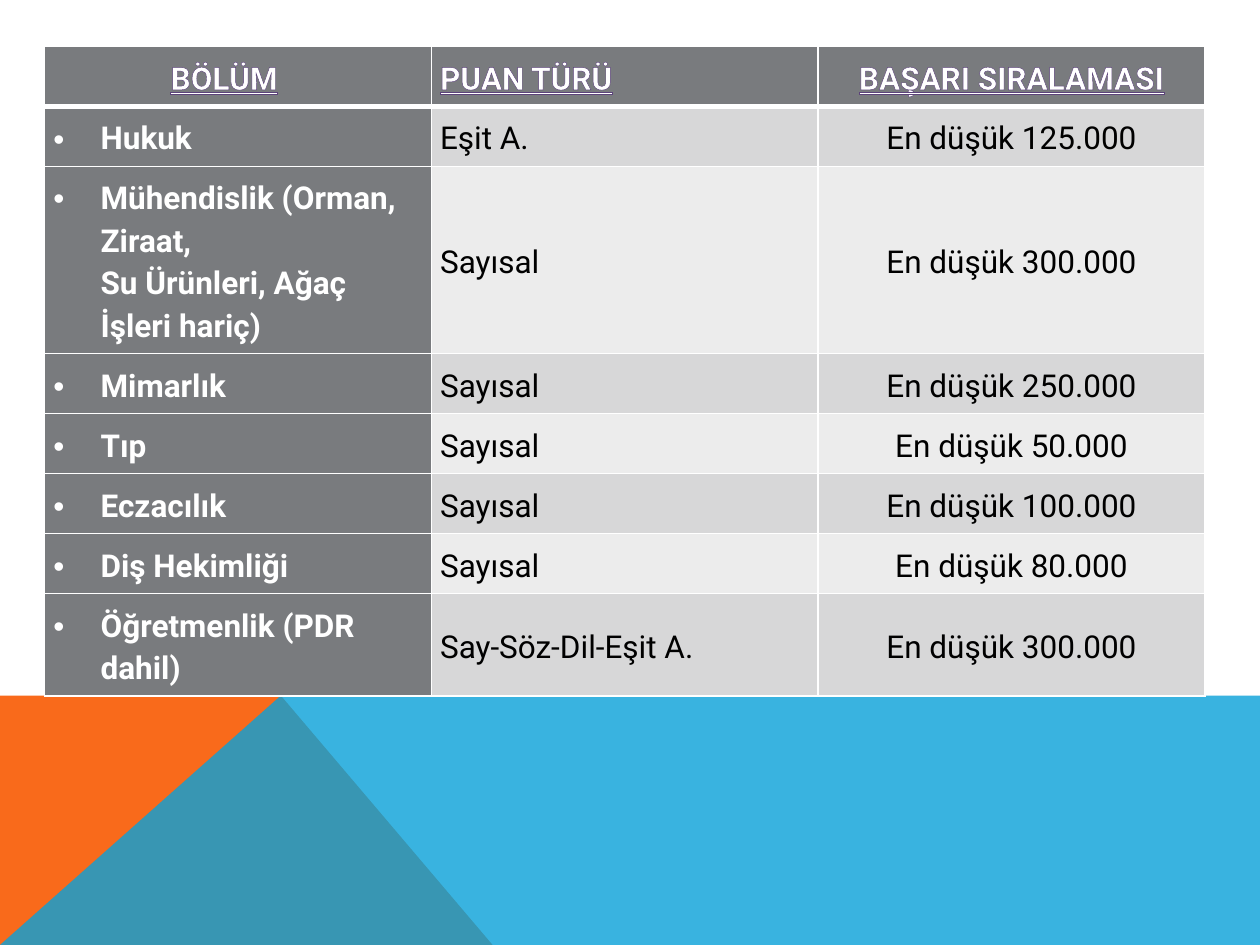
from lxml.etree import SubElement
from pptx import Presentation
from pptx.dml.color import RGBColor
from pptx.enum.text import MSO_ANCHOR as ANCHOR, PP_ALIGN as ALIGN
from pptx.oxml import parse_xml
from pptx.oxml.ns import nsdecls, qn
from pptx.util import Pt

WHITE, GRAY = "FFFFFF", "797B7E"
BANDS = ["D7D7D8", "ECECEC"]


def set_fill(fill, color):
    fill.solid()
    fill.fore_color.rgb = RGBColor.from_string(color)


def line_xml(tag, width, color):
    return parse_xml(
        f'<a:{tag} {nsdecls("a")} w="{Pt(width)}"><a:solidFill>'
        f'<a:srgbClr val="{color}"/></a:solidFill></a:{tag}>')


prs = Presentation()
prs.slide_width, prs.slide_height = Pt(720), Pt(540)
s = prs.slides.add_slide(prs.slide_layouts[6])

# Bottom decoration: orange triangle under a translucent blue band
top, peak = 397.5, 160.5
decorations = [
    ("F96A1B", 100, [(0, 540), (0, top), (peak, top), (281.5, 540)]),
    ("08A1D9", 80, [(0, 540), (peak, top), (720, top), (720, 540)]),
]
for color, opacity, points in decorations:
    builder = s.shapes.build_freeform(Pt(points[0][0]), Pt(points[0][1]))
    builder.add_line_segments([(Pt(x), Pt(y)) for x, y in points[1:]], close=True)
    sp = builder.convert_to_shape()
    sp.shadow.inherit = False
    sp.line.fill.background()
    set_fill(sp.fill, color)
    if opacity < 100:
        clr = sp._element.spPr.find(qn("a:solidFill"))[0]
        SubElement(clr, qn("a:alpha"), val=str(opacity * 1000))

# Table of departments
rows = [
    ("BÖLÜM", "PUAN TÜRÜ", "BAŞARI SIRALAMASI"),
    ("Hukuk", "Eşit A.", "En düşük 125.000"),
    ("Mühendislik (Orman, Ziraat,\vSu Ürünleri, Ağaç İşleri hariç)",
     "Sayısal", "En düşük 300.000"),
    ("Mimarlık", "Sayısal", "En düşük 250.000"),
    ("Tıp", "Sayısal", "En düşük 50.000"),
    ("Eczacılık", "Sayısal", "En düşük 100.000"),
    ("Diş Hekimliği", "Sayısal", "En düşük 80.000"),
    ("Öğretmenlik (PDR dahil)", "Say-Söz-Dil-Eşit A.", "En düşük 300.000"),
]
heights = [33.5, 33.9, 106.5, 33.9, 33.9, 33.9, 33.9, 57.5]
table = s.shapes.add_table(len(rows), 3, Pt(25.5), Pt(26.5),
                           Pt(663), Pt(sum(heights))).table
for col in table.columns:
    col.width = Pt(221)

for i, (row, height) in enumerate(zip(rows, heights)):
    table.rows[i].height = Pt(height)
    for j, text in enumerate(row):
        header, dark = i == 0, i == 0 or j == 0
        cell = table.cell(i, j)
        cell.vertical_anchor = ANCHOR.MIDDLE
        cell.margin_left = cell.margin_right = Pt(5)
        cell.margin_top = cell.margin_bottom = Pt(5)

        # Borders, thicker below the header, then the fill
        tcPr = cell._tc.get_or_add_tcPr()
        widths = {"lnL": 1, "lnR": 1, "lnT": 3 if i == 1 else 1,
                  "lnB": 3 if header else 1}
        for tag, width in widths.items():
            tcPr.append(line_xml(tag, width, WHITE))
        set_fill(cell.fill, GRAY if dark else BANDS[(i - 1) % 2])

        # Text
        p = cell.text_frame.paragraphs[0]
        p.text = text
        p.line_spacing = 1.15
        p.alignment = ALIGN.CENTER if j == 2 else ALIGN.LEFT
        for r in p.runs:
            r.font.name, r.font.size = "Roboto", Pt(18)
            r.font.bold, r.font.underline = dark, header
            set_fill(r.font.fill, WHITE if dark else "000000")
            if header:
                r.font._element.insert(0, line_xml("ln", 0.35, "5C437A"))

        # Indents and bullets of the first column
        if j == 0:
            pPr = p._p.get_or_add_pPr()
            pPr.set("marL", str(Pt(67 if header else 27)))
            if not header:
                pPr.set("indent", str(Pt(-27)))
                SubElement(pPr, qn("a:buFont"), typeface="Arial")
                SubElement(pPr, qn("a:buChar"), char="•")

prs.save("out.pptx")
